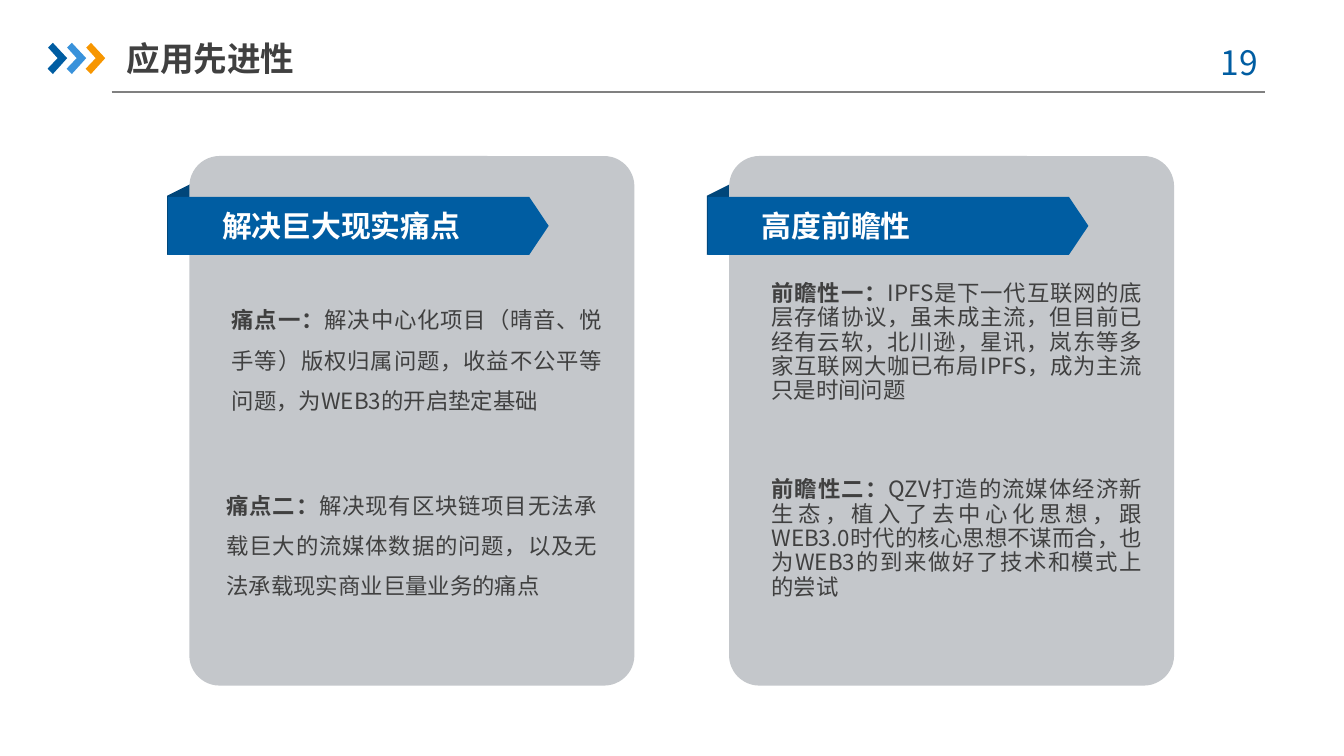
from dataclasses import dataclass

from lxml import etree
from pptx import Presentation
from pptx import util as u
from pptx.dml.color import RGBColor
from pptx.enum import shapes, text
from pptx.oxml.ns import qn


@dataclass(frozen=True)
class Theme:
    font: str = "Noto Sans CJK SC"
    ink: str = "404040"
    rule: str = "808080"
    white: str = "FFFFFF"
    card: str = "C4C7CB"
    blue: str = "005DA2"
    sky: str = "3992DB"
    orange: str = "F79600"
    fold: str = "00467A"
    title_size: int = 18
    heading_size: int = 16
    body_size: int = 12


class SlideBuilder:
    def __init__(self, slide, theme):
        self.s = slide
        self.theme = theme

    def paint(self, sp, color):
        sp.shadow.inherit = False
        sp.fill.solid()
        sp.fill.fore_color.rgb = RGBColor.from_string(color)
        sp.line.fill.background()

    def shape(self, kind, box, color, adj=None):
        sp = self.s.shapes.add_shape(kind, *map(u.Cm, box))
        self.paint(sp, color)
        if adj is not None:
            sp.adjustments[0] = adj
        return sp

    def outline(self, points, color):
        start, *rest = [(u.Cm(x), u.Cm(y)) for x, y in points]
        builder = self.s.shapes.build_freeform(*start)
        builder.add_line_segments(rest, close=True)
        self.paint(builder.convert_to_shape(), color)

    def rule(self, x1, x2, y):
        line = self.s.shapes.add_connector(
            shapes.MSO_CONNECTOR.STRAIGHT, u.Cm(x1), u.Cm(y), u.Cm(x2), u.Cm(y))
        line.line.color.rgb = RGBColor.from_string(self.theme.rule)
        line.line.width = u.Pt(0.75)
        etree.SubElement(line._element.spPr, qn("a:effectLst"))

    def text(self, box, runs, size, color, align=text.PP_ALIGN.LEFT,
             spacing=None, insets=(0, 0), anchor=text.MSO_ANCHOR.TOP):
        """Add one paragraph; runs are (wording, bold) pairs."""
        tf = self.s.shapes.add_textbox(*map(u.Cm, box)).text_frame
        tf.word_wrap = True
        tf.vertical_anchor = anchor
        tf.margin_left = tf.margin_right = u.Cm(insets[0])
        tf.margin_top = tf.margin_bottom = u.Cm(insets[1])
        p = tf.paragraphs[0]
        p.alignment = align
        if spacing is not None:
            p.line_spacing = spacing
        p.font.name = self.theme.font
        p.font.size = u.Pt(size)
        p.font.color.rgb = RGBColor.from_string(color)
        for wording, bold in runs:
            r = p.add_run()
            r.text = wording
            r.font.bold = bold
            # East Asian text takes its own typeface
            etree.SubElement(r.font._element, qn("a:ea"), typeface=self.theme.font)

    def panel(self, x, heading, points, spacing):
        """Add a card with a folded ribbon; points are (dx, y, label, body)."""
        t = self.theme
        kind = shapes.MSO_SHAPE
        fold = self.shape(kind.FLOWCHART_DATA, (x - 0.84, 3.84, 1.4, 0.56), t.fold)
        fold.rotation = 270
        fold._element.spPr.find(qn("a:xfrm")).set("flipH", "1")
        self.shape(kind.ROUNDED_RECTANGLE, (x, 2.95, 8.41, 10.01), t.card, 0.068)
        self.shape(kind.PENTAGON, (x - 0.4, 3.72, 7.19, 1.1), t.blue, 0.335)
        self.text((x + 0.62, 3.92, 4.72, 0.68), [(heading, True)],
                  t.heading_size, t.white)
        for dx, y, label, body in points:
            self.text((x + dx, y, 7.01, 2.25), [(label, True), (body, False)],
                      t.body_size, t.ink, text.PP_ALIGN.JUSTIFY, spacing)


def main():
    prs = Presentation()
    prs.slide_width, prs.slide_height = u.Cm(25.4), u.Cm(14.29)
    theme = Theme()
    b = SlideBuilder(prs.slides.add_slide(prs.slide_layouts[6]), theme)

    # Header: rule, chevrons, page number and title
    b.rule(2.11, 23.9, 1.74)
    chevron = [(0.91, 0.9), (1, 0.81), (1.27, 1.1), (1, 1.4), (0.9, 1.3), (1.09, 1.1)]
    for i, color in enumerate((theme.blue, theme.sky, theme.orange)):
        b.outline([(x + 0.36 * i, y) for x, y in chevron], color)
    b.text((22.5, 0.66, 1.85, 1.02), [("19", False)], theme.title_size, theme.blue,
           text.PP_ALIGN.CENTER, insets=(0.25, 0.13))
    b.text((2.39, 0.56, 5.92, 1.07), [("应用先进性", True)], theme.title_size,
           theme.ink, insets=(0, 0.13), anchor=text.MSO_ANCHOR.MIDDLE)

    # Two panels
    panels = [
        ("解决巨大现实痛点", 1.5, [
            (0.8, 5.54, "痛点一：",
             "解决中心化项目（晴音、悦手等）版权归属问题，收益不公平等问题，为WEB3的开启垫定基础"),
            (0.7, 9.04, "痛点二：",
             "解决现有区块链项目无法承载巨大的流媒体数据的问题，以及无法承载现实商业巨量业务的痛点"),
        ]),
        ("高度前瞻性", u.Pt(13), [
            (0.8, 5.33, "前瞻性一：",
             "IPFS是下一代互联网的底层存储协议，虽未成主流，但目前已经有云软，北川逊，星讯，岚东等多"
             "家互联网大咖已布局IPFS，成为主流只是时间问题"),
            (0.8, 9.04, "前瞻性二：",
             "QZV打造的流媒体经济新生态，植入了去中心化思想，跟WEB3.0时代的核心思想不谋而合，"
             "也为WEB3的到来做好了技术和模式上的尝试"),
        ]),
    ]
    for i, (heading, spacing, points) in enumerate(panels):
        b.panel(3.58 + 10.2 * i, heading, points, spacing)

    prs.save("out.pptx")


if __name__ == "__main__":
    main()
